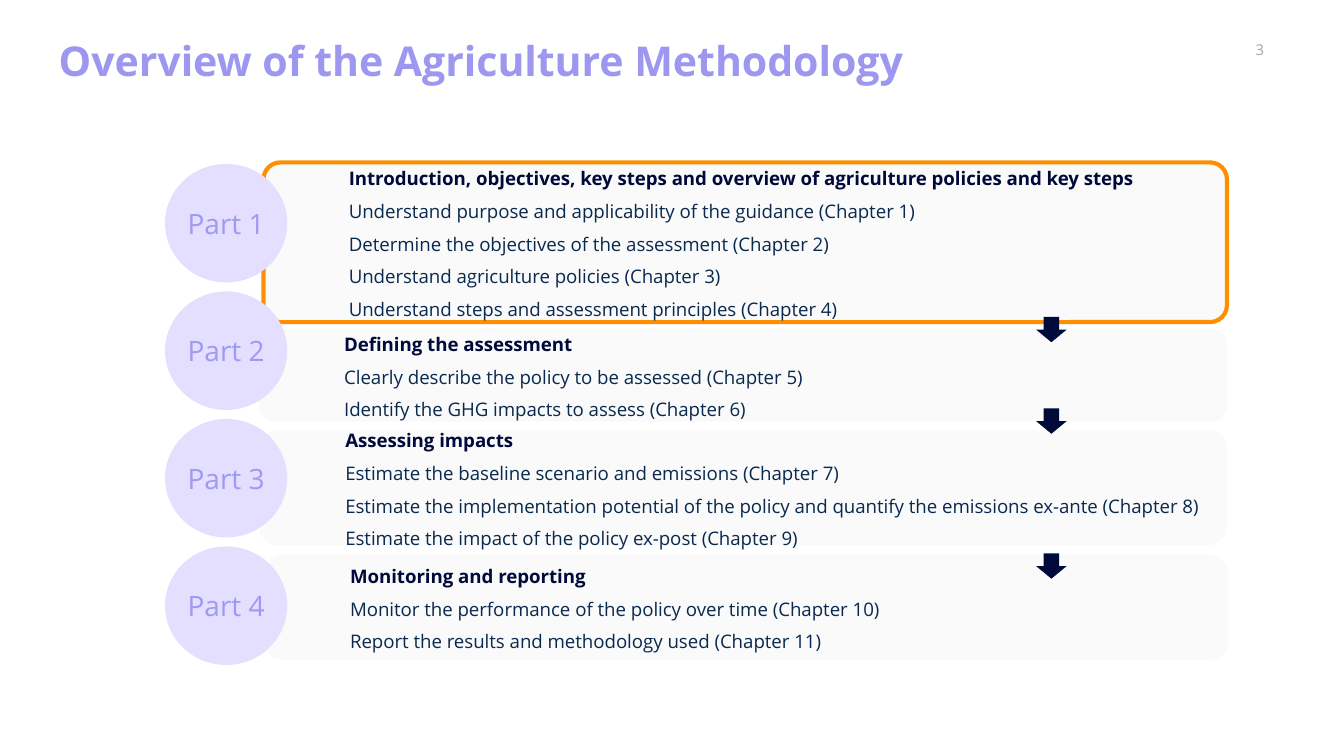
from pptx import Presentation
from pptx.dml.color import RGBColor
from pptx.enum.shapes import MSO_SHAPE
from pptx.enum.text import MSO_ANCHOR, PP_ALIGN
from pptx.util import Cm, Pt

ROUNDED = MSO_SHAPE.ROUNDED_RECTANGLE
OVAL = MSO_SHAPE.OVAL
ARROW = MSO_SHAPE.RIGHT_ARROW
TOP, MIDDLE = MSO_ANCHOR.TOP, MSO_ANCHOR.MIDDLE
LEFT, CENTER = PP_ALIGN.LEFT, PP_ALIGN.CENTER

FONT = "Open Sans"
COLORS = {
    "title": "9D97F0",
    "number": "A5A5A5",
    "panel": "FAFAFA",
    "highlight": "FF8E00",
    "heading": "000A3A",
    "body": "09294E",
    "circle": "E4DEFF",
    "part": "9E99F2",
}

# Each part: left, top, width, height in cm, corner radius, outlined, lines
PARTS = [
    (4.98, 3.07, 18.21, 3.02, 0.106, True, [
        "Introduction, objectives, key steps and overview of agriculture policies and key steps",
        "Understand purpose and applicability of the guidance (Chapter 1)",
        "Determine the objectives of the assessment (Chapter 2)",
        "Understand agriculture policies (Chapter 3)",
        "Understand steps and assessment principles (Chapter 4)",
    ]),
    (4.9, 6.22, 18.29, 1.75, 0.167, False, [
        "Defining the assessment",
        "Clearly describe the policy to be assessed (Chapter 5)",
        "Identify the GHG impacts to assess (Chapter 6)",
    ]),
    (4.9, 8.13, 18.29, 2.18, 0.167, False, [
        "Assessing impacts",
        "Estimate the baseline scenario and emissions (Chapter 7)",
        "Estimate the implementation potential of the policy and quantify the emissions ex-ante (Chapter 8)",
        "Estimate the impact of the policy ex-post (Chapter 9)",
    ]),
    (5, 10.49, 18.21, 1.98, 0.167, False, [
        "Monitoring and reporting",
        "Monitor the performance of the policy over time (Chapter 10)",
        "Report the results and methodology used (Chapter 11)",
    ]),
]
ARROW_TOPS = [5.94, 7.67, 10.41]
CIRCLE_TOP, CIRCLE_STEP = 3.1, 2.41


def color(name):
    return RGBColor.from_string(COLORS[name])


def set_frame(box, anchor, side=0, edge=0):
    frame = box.text_frame
    frame.word_wrap = True
    frame.vertical_anchor = anchor
    frame.margin_left = frame.margin_right = Cm(side)
    frame.margin_top = frame.margin_bottom = Cm(edge)
    return frame


def add_span(para, text, size, color_name, bold=False, align=LEFT):
    para.alignment = align
    span = para.add_run()
    span.text = text
    span.font.name = FONT
    span.font.size = Pt(size)
    span.font.bold = bold
    span.font.color.rgb = color(color_name)


def add_filled_shape(page, kind, left, top, width, height, fill):
    shape = page.shapes.add_shape(kind, Cm(left), Cm(top), Cm(width), Cm(height))
    shape.shadow.inherit = False
    shape.fill.solid()
    shape.fill.fore_color.rgb = color(fill)
    shape.line.fill.background()
    return shape


def add_page_number(page):
    box = page.shapes.add_textbox(Cm(22.81), Cm(0.66), Cm(2), Cm(0.56))
    frame = set_frame(box, MIDDLE)
    add_span(frame.paragraphs[0], "3", 8, "number", align=CENTER)


def add_title(page, text):
    box = page.shapes.add_textbox(Cm(0.86), Cm(0.53), Cm(23.67), Cm(1.42))
    para = set_frame(box, TOP, 0.25, 0.25).paragraphs[0]
    para.line_spacing = 0.9
    add_span(para, text, 22, "title", bold=True)


def add_panel(page, left, top, width, height, radius, outlined, lines):
    panel = add_filled_shape(page, ROUNDED, left, top, width, height, "panel")
    panel.adjustments[0] = radius
    if outlined:
        panel.line.color.rgb = color("highlight")
        panel.line.width = Pt(2.25)
    frame = set_frame(panel, MIDDLE, 0.25, 0.13)
    for index, line in enumerate(lines):
        is_heading = index == 0
        para = frame.paragraphs[0] if is_heading else frame.add_paragraph()
        properties = para._p.get_or_add_pPr()
        properties.set("marL", str(Cm(1.27)))
        properties.set("indent", "0")
        para.line_spacing = 1.13
        para.space_before = Pt(0 if is_heading else 4)
        add_span(para, line, 10, "heading" if is_heading else "body", is_heading)


def add_down_arrow(page, top):
    arrow = add_filled_shape(page, ARROW, 19.63, top, 0.48, 0.58, "heading")
    arrow.rotation = 90


def add_part_circle(page, index):
    top = CIRCLE_TOP + index * CIRCLE_STEP
    circle = add_filled_shape(page, OVAL, 3.12, top, 2.31, 2.24, "circle")
    frame = set_frame(circle, MIDDLE)
    add_span(frame.paragraphs[0], f"Part {index + 1}", 15, "part", align=CENTER)


def main():
    deck = Presentation()
    deck.slide_width, deck.slide_height = Cm(25.4), Cm(14.29)
    page = deck.slides.add_slide(deck.slide_layouts[6])

    # Header
    add_page_number(page)
    add_title(page, "Overview of the Agriculture Methodology")

    # Panels, with the highlighted first part in front
    for part in reversed(PARTS):
        add_panel(page, *part)

    # Arrows from part to part
    for top in ARROW_TOPS:
        add_down_arrow(page, top)

    # Part labels
    for index in range(len(PARTS)):
        add_part_circle(page, index)

    deck.save("out.pptx")


if __name__ == "__main__":
    main()
